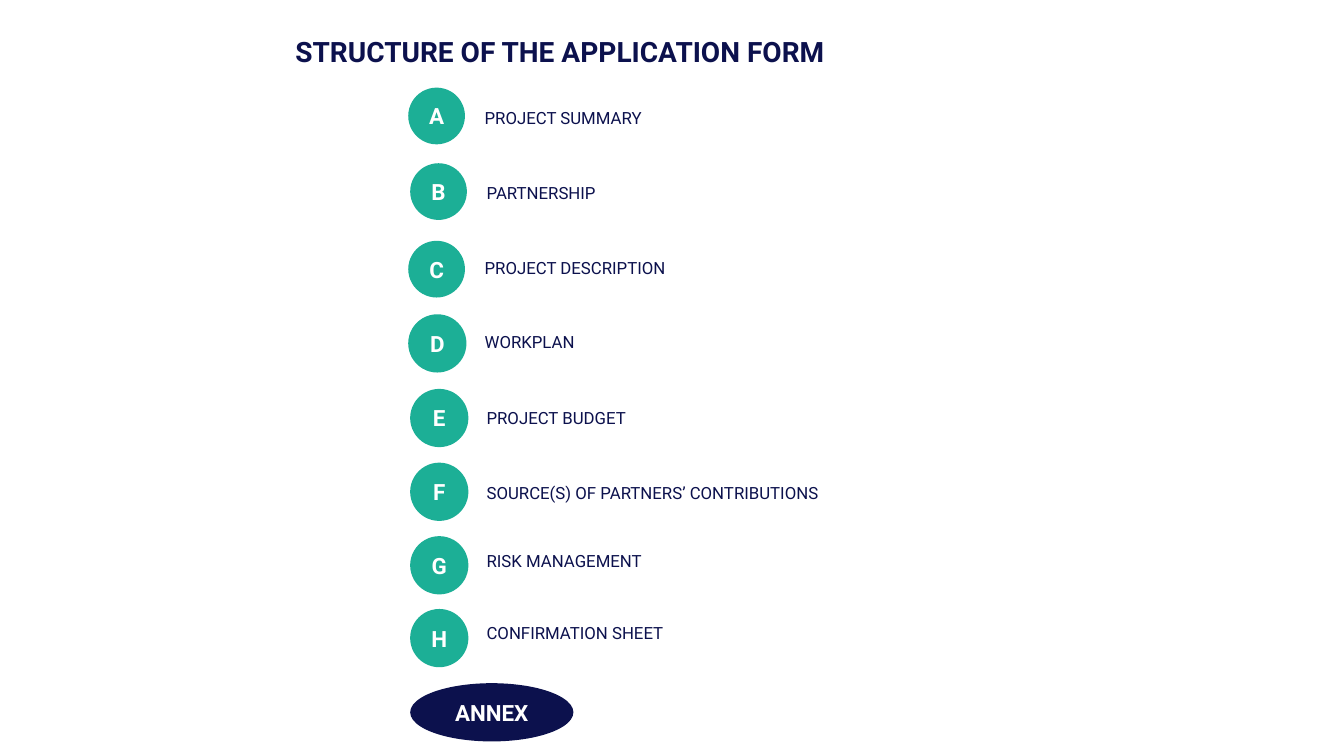
import pptx
import pptx.util
import pptx.dml.color
import pptx.enum.shapes
import pptx.enum.text

Pt = pptx.util.Pt
ANCHOR = pptx.enum.text.MSO_ANCHOR
ALIGN = pptx.enum.text.PP_ALIGN
COLORS = {"navy": "0C114D", "teal": "1CAF96", "white": "FFFFFF"}
LABEL_GAP = 47.5
SECTIONS = [
    ("A", "PROJECT SUMMARY", 291.6, 62.6, 40.5, 10.8),
    ("B", "PARTNERSHIP", 293, 116.6, 40.5, 10.1),
    ("C", "PROJECT DESCRIPTION", 291.6, 172, 40.5, 8.7),
    ("D", "WORKPLAN", 291.6, 224.5, 41.6, 8.7),
    ("E", "PROJECT BUDGET", 293, 277.8, 41.6, 10.1),
    ("F", "SOURCE(S) OF PARTNERS’ CONTRIBUTIONS", 293, 330.5, 41.6, 10.8),
    ("G", "RISK MANAGEMENT", 293, 383, 41.6, 6.5),
    ("H", "CONFIRMATION SHEET", 293, 435, 41.6, 6.5),
]


def rgb(name):
    return pptx.dml.color.RGBColor.from_string(COLORS[name])


def write(tf, text, size, color="navy", bold=False, align=ALIGN.LEFT, anchor=ANCHOR.TOP):
    tf.word_wrap = True
    tf.auto_size = pptx.enum.text.MSO_AUTO_SIZE.NONE
    tf.vertical_anchor = anchor
    p = tf.paragraphs[0]
    p.alignment = align
    r = p.add_run()
    r.text = text
    r.font.name = "Roboto"
    r.font.size = Pt(size)
    r.font.bold = bold
    r.font.color.rgb = rgb(color)


def add_title(s, text, left, top, width, height):
    sp = s.shapes.title
    sp.left, sp.top, sp.width, sp.height = Pt(left), Pt(top), Pt(width), Pt(height)
    write(sp.text_frame, text, 20, bold=True)


def add_oval(shapes, text, fill, left, top, width, height):
    sp = shapes.add_shape(pptx.enum.shapes.MSO_SHAPE.OVAL,
                          Pt(left), Pt(top), Pt(width), Pt(height))
    sp.shadow.inherit = False
    sp.fill.solid()
    sp.fill.fore_color.rgb = rgb(fill)
    sp.line.fill.background()
    tf = sp.text_frame
    tf.margin_left = tf.margin_right = 0
    write(tf, text, 16, color="white", bold=True, align=ALIGN.CENTER, anchor=ANCHOR.MIDDLE)


def add_section(s, letter, label, left, top, diameter, label_drop):
    shapes = s.shapes.add_group_shape().shapes
    add_oval(shapes, letter, "teal", left, top, diameter, diameter)
    sp = shapes.add_textbox(Pt(left + LABEL_GAP), Pt(top + label_drop), Pt(280), Pt(21.8))
    write(sp.text_frame, label, 12)


def build_structure_slide(prs):
    s = prs.slides.add_slide(prs.slide_layouts[5])
    add_title(s, "STRUCTURE OF THE APPLICATION FORM", 203.8, 20.9, 756, 31.5)
    for section in SECTIONS:
        add_section(s, *section)
    add_oval(s.shapes, "ANNEX", "navy", 293, 488, 116.6, 41.6)


def main():
    prs = pptx.Presentation()
    prs.slide_width, prs.slide_height = Pt(960), Pt(540)
    build_structure_slide(prs)
    prs.save("out.pptx")


if __name__ == "__main__":
    main()
